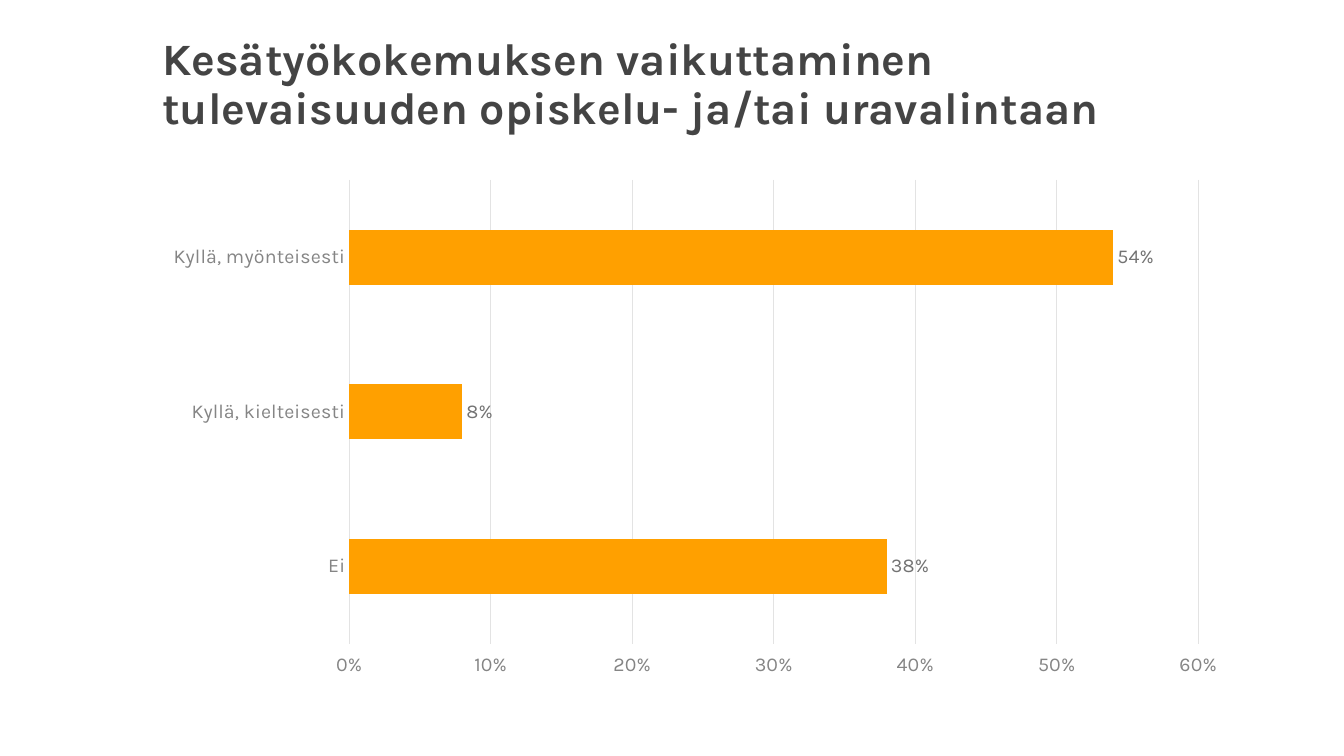
from lxml import etree
from pptx import Presentation
from pptx.chart.data import CategoryChartData
from pptx.dml.color import RGBColor
from pptx.enum.chart import XL_CHART_TYPE as ChartType
from pptx.enum.chart import XL_LABEL_POSITION as LabelPosition
from pptx.enum.chart import XL_TICK_LABEL_POSITION as TickLabelPosition
from pptx.enum.chart import XL_TICK_MARK as TickMark
from pptx.enum.text import MSO_ANCHOR as Anchor
from pptx.enum.text import PP_ALIGN as Align
from pptx.oxml.ns import qn
from pptx.util import Pt

TITLE = "Kesätyökokemuksen vaikuttaminen tulevaisuuden opiskelu- ja/tai uravalintaan"
ANSWERS = {"Kyllä, myönteisesti": 0.54, "Kyllä, kielteisesti": 0.08, "Ei": 0.38}
COLORS = {
    "title": "444444",
    "axis": "858585",
    "label": "737373",
    "grid": "E3E3E3",
    "bar": "FFA000",
}
FONT = "Karla"
LEFT, WIDTH = 108.7, 776.9
CHART_TOP, CHART_HEIGHT = 121, 365
PLOT_LEFT, PLOT_TOP, PLOT_WIDTH, PLOT_HEIGHT = 249.5, 128.5, 606.5, 331.5


def color(name):
    return RGBColor.from_string(COLORS[name])


def style_font(font, size, color_name, bold=False):
    font.name = FONT
    font.size = Pt(size)
    font.bold = bold
    font.color.rgb = color(color_name)


def style_line(line):
    line.color.rgb = color("grid")
    line.width = Pt(0.75)


def place_plot(chart):
    plot_area = chart.element.chart.plotArea
    for old in plot_area.findall(qn("c:layout")):
        plot_area.remove(old)
    layout = etree.Element(qn("c:layout"))
    plot_area.insert(0, layout)
    manual = etree.SubElement(layout, qn("c:manualLayout"))
    settings = {
        "layoutTarget": "inner",
        "xMode": "edge",
        "yMode": "edge",
        "x": (PLOT_LEFT - LEFT) / WIDTH,
        "y": (PLOT_TOP - CHART_TOP) / CHART_HEIGHT,
        "w": PLOT_WIDTH / WIDTH,
        "h": PLOT_HEIGHT / CHART_HEIGHT,
    }
    for name, value in settings.items():
        etree.SubElement(manual, qn(f"c:{name}")).set("val", str(value))


def add_title(page):
    title = page.shapes.title
    title.left, title.top = Pt(LEFT), Pt(19.6)
    title.width, title.height = Pt(WIDTH), Pt(82.8)
    frame = title.text_frame
    frame.text = TITLE
    frame.word_wrap = True
    frame.vertical_anchor = Anchor.MIDDLE
    para = frame.paragraphs[0]
    para.alignment = Align.LEFT
    para.line_spacing = 0.9
    style_font(para.runs[0].font, 32, "title", bold=True)


def add_answer_chart(page):
    data = CategoryChartData(number_format="0%")
    data.categories = list(ANSWERS)
    data.add_series("Series 1", list(ANSWERS.values()))
    chart = page.shapes.add_chart(
        ChartType.BAR_CLUSTERED,
        Pt(LEFT), Pt(CHART_TOP), Pt(WIDTH), Pt(CHART_HEIGHT),
        data,
    ).chart
    chart.has_legend = False
    chart.has_title = False
    style_font(chart.font, 10, "title")
    place_plot(chart)

    answers, shares = chart.category_axis, chart.value_axis
    for axis in (answers, shares):
        axis.major_tick_mark = axis.minor_tick_mark = TickMark.NONE
        style_font(axis.tick_labels.font, 14, "axis")
    answers.reverse_order = True
    style_line(answers.format.line)

    shares.minimum_scale, shares.maximum_scale, shares.major_unit = 0, 0.6, 0.1
    shares.has_major_gridlines = True
    style_line(shares.major_gridlines.format.line)
    shares.format.line.fill.background()
    shares.tick_label_position = TickLabelPosition.HIGH
    shares.tick_labels.number_format = "0%"
    shares.tick_labels.number_format_is_linked = False

    plot = chart.plots[0]
    plot.gap_width = 182
    plot.vary_by_categories = False
    bars = plot.series[0]
    bars.format.fill.solid()
    bars.format.fill.fore_color.rgb = color("bar")
    labels = bars.data_labels
    labels.show_value = True
    labels.number_format = "0%"
    labels.number_format_is_linked = False
    labels.position = LabelPosition.OUTSIDE_END
    style_font(labels.font, 14, "label")


def main():
    deck = Presentation()
    deck.slide_width, deck.slide_height = Pt(960), Pt(540)
    page = deck.slides.add_slide(deck.slide_layouts[5])
    add_title(page)
    add_answer_chart(page)
    deck.save("out.pptx")


if __name__ == "__main__":
    main()
